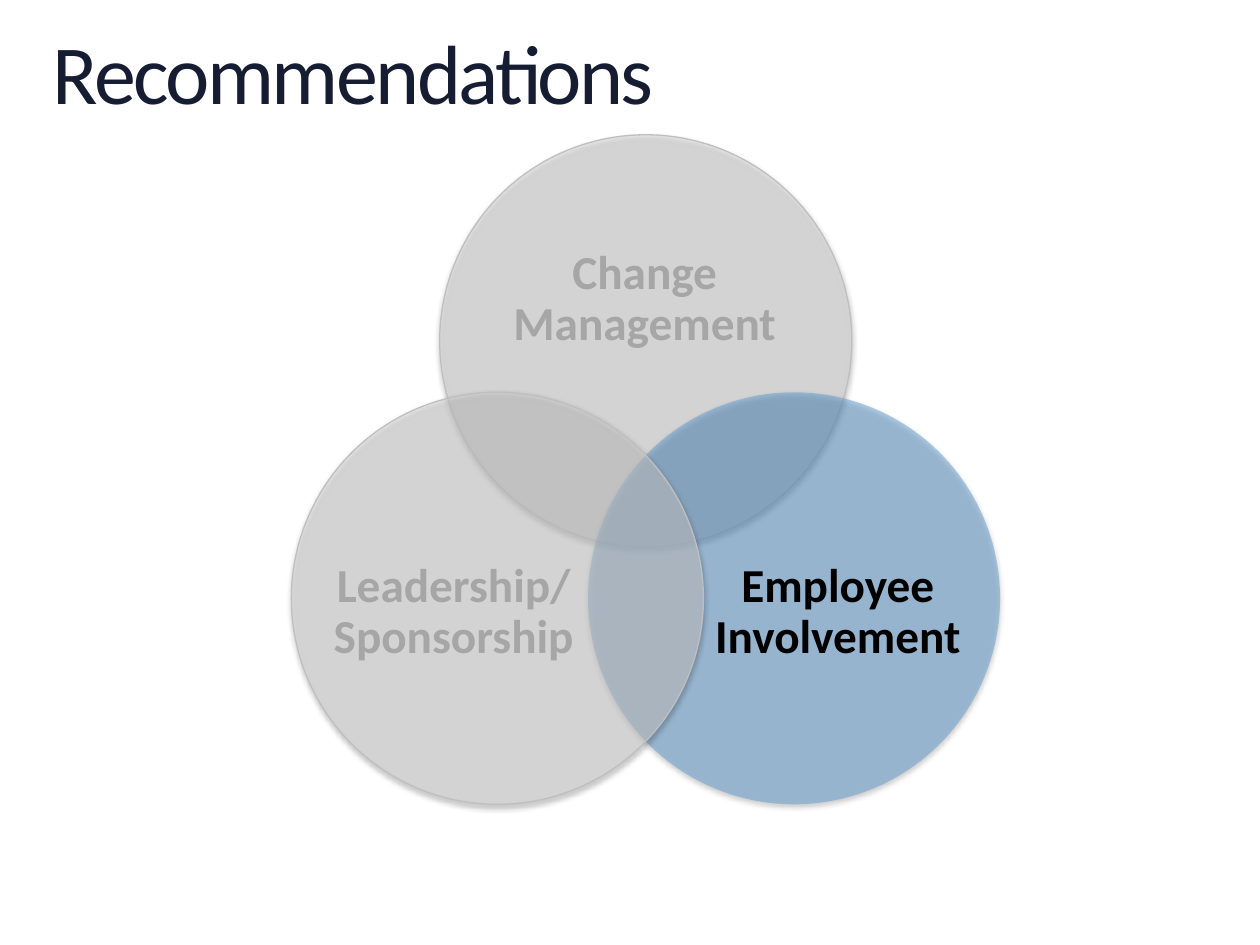
"""Build a Recommendations slide with a three-circle Venn diagram."""
from lxml.etree import SubElement
from pptx import Presentation
from pptx.dml.color import RGBColor
from pptx.enum.shapes import MSO_SHAPE
from pptx.enum.text import MSO_ANCHOR, PP_ALIGN
from pptx.oxml import parse_xml
from pptx.oxml.ns import nsdecls, qn
from pptx.util import Inches, Pt

SHADOW = (f'<a:effectLst {nsdecls("a")}><a:outerShdw blurRad="40000" dist="20000" '
          'dir="5400000" rotWithShape="0"><a:srgbClr val="000000"><a:alpha val="38000"/>'
          '</a:srgbClr></a:outerShdw></a:effectLst>')


def rgb(code):
    return RGBColor.from_string(code)


def write(sp, text, anchor, align, color, **font):
    tf = sp.text_frame
    frame = dict(word_wrap=True, vertical_anchor=anchor, margin_left=0,
                 margin_right=0, margin_top=0, margin_bottom=0)
    for name, value in frame.items():
        setattr(tf, name, value)
    p = tf.paragraphs[0]
    p.alignment, p.line_spacing = align, 0.9
    r = p.add_run()
    r.text = text
    for name, value in dict(name="Calibri", **font).items():
        setattr(r.font, name, value)
    r.font.color.rgb = rgb(color)
    return r


prs = Presentation()
prs.slide_width, prs.slide_height = Inches(10), Inches(7.5)
s = prs.slides.add_slide(prs.slide_layouts[5])

title = s.shapes.title
title.left, title.top, title.width, title.height = map(Inches, (0.42, 0.25, 9.17, 0.73))
r = write(title, "Recommendations", MSO_ANCHOR.TOP, PP_ALIGN.LEFT, "161D32", size=Pt(48))
r.font._element.set("spc", "-150")

size = Inches(3.27)
left, top = Inches(3.49), Inches(1.07)
circles = [
    ("Change Management", 0, 0, (0.13, 0.175, 0.735, 0.45), "D9D9D9", "BFBFBF", "A6A6A6"),
    ("Employee Involvement", 0.36, 0.625, (0.306, 0.26, 0.6, 0.55), "629DD1", None, "000000"),
    ("Leadership/ Sponsorship", -0.36, 0.625, (0.094, 0.26, 0.6, 0.55), "D9D9D9", "BFBFBF", "A6A6A6"),
]
for text, dx, dy, (tx, ty, tw, th), fill, line, color in circles:
    x, y = left + dx * size, top + dy * size
    sp = s.shapes.add_shape(MSO_SHAPE.OVAL, int(x), int(y), size, size)
    sp.fill.solid()
    sp.fill.fore_color.rgb = rgb(fill)
    tint = sp._element.spPr.find(f'{qn("a:solidFill")}/{qn("a:srgbClr")}')
    SubElement(tint, qn("a:alpha"), val="50000")
    if line:
        sp.line.color.rgb = rgb(line)
        sp.line.width = Pt(0.75)
    else:
        sp.line.fill.background()
    sp._element.spPr.append(parse_xml(SHADOW))
    box = s.shapes.add_textbox(int(x + tx * size), int(y + ty * size),
                               int(tw * size), int(th * size))
    write(box, text, MSO_ANCHOR.MIDDLE, PP_ALIGN.CENTER, color, size=Pt(27), bold=True)

prs.save("out.pptx")
